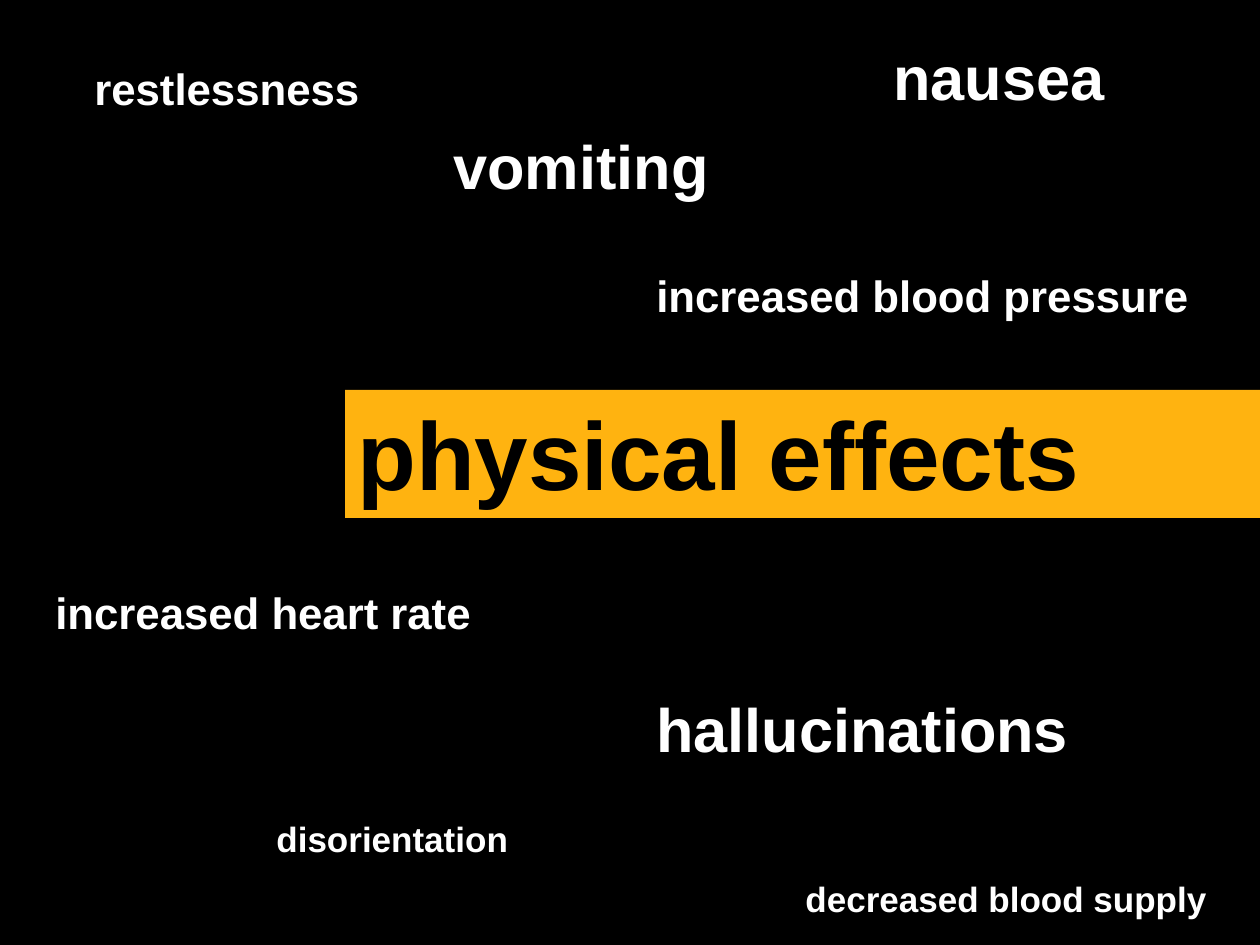
from pptx import Presentation
from pptx.dml.color import RGBColor
from pptx.enum.shapes import MSO_SHAPE
from pptx.enum.text import MSO_ANCHOR, MSO_AUTO_SIZE, PP_ALIGN
from pptx.util import Emu, Pt

PX = 914400 / 126
WIDTH, HEIGHT = 1260, 945


def emu(*lengths):
    return [Emu(round(length * PX)) for length in lengths]


def write(shape, text, size, color, line_spacing=None):
    frame = shape.text_frame
    frame.word_wrap = True
    frame.auto_size = MSO_AUTO_SIZE.SHAPE_TO_FIT_TEXT
    frame.vertical_anchor = MSO_ANCHOR.TOP
    paragraph = frame.paragraphs[0]
    paragraph.alignment = PP_ALIGN.LEFT
    if line_spacing:
        paragraph.line_spacing = Pt(line_spacing)
    run = paragraph.add_run()
    run.text = text
    run.font.name = "Arial"
    run.font.size = Pt(size)
    run.font.bold = True
    run.font.color.rgb = RGBColor.from_string(color)


prs = Presentation()
prs.slide_width, prs.slide_height = emu(WIDTH, HEIGHT)
slide = prs.slides.add_slide(prs.slide_layouts[6])
slide.background.fill.solid()
slide.background.fill.fore_color.rgb = RGBColor.from_string("000000")

# Black backdrop and orange title band
bands = []
for box, color in [((0, 0, WIDTH, HEIGHT), "000000"),
                   ((345, 390, WIDTH - 345, 128), "FFB310")]:
    band = slide.shapes.add_shape(MSO_SHAPE.RECTANGLE, *emu(*box))
    band.shadow.inherit = False
    band.fill.solid()
    band.fill.fore_color.rgb = RGBColor.from_string(color)
    band.line.fill.background()
    bands.append(band)
backdrop, title_band = bands
write(title_band, "physical effects", size=55, color="000000", line_spacing=65)

# Scattered effects: text, left, top, width, font size
effects = [
    ("increased blood pressure", 644, 263, 643, 25),
    ("increased heart rate", 43, 580, 643, 25),
    ("nausea", 881, 33, 759, 35),
    ("hallucinations", 644, 685, 795, 35),
    ("restlessness", 82, 56, 643, 25),
    ("decreased blood supply", 793, 871, 646, 20),
    ("disorientation", 264, 811, 646, 20),
    ("vomiting", 441, 122, 795, 35),
]
box_heights = {20: 55, 25: 66, 35: 87}
for text, left, top, width, size in effects:
    effect = slide.shapes.add_textbox(*emu(left, top, width, box_heights[size]))
    write(effect, text, size=size, color="FFFFFF")

prs.save("out.pptx")
